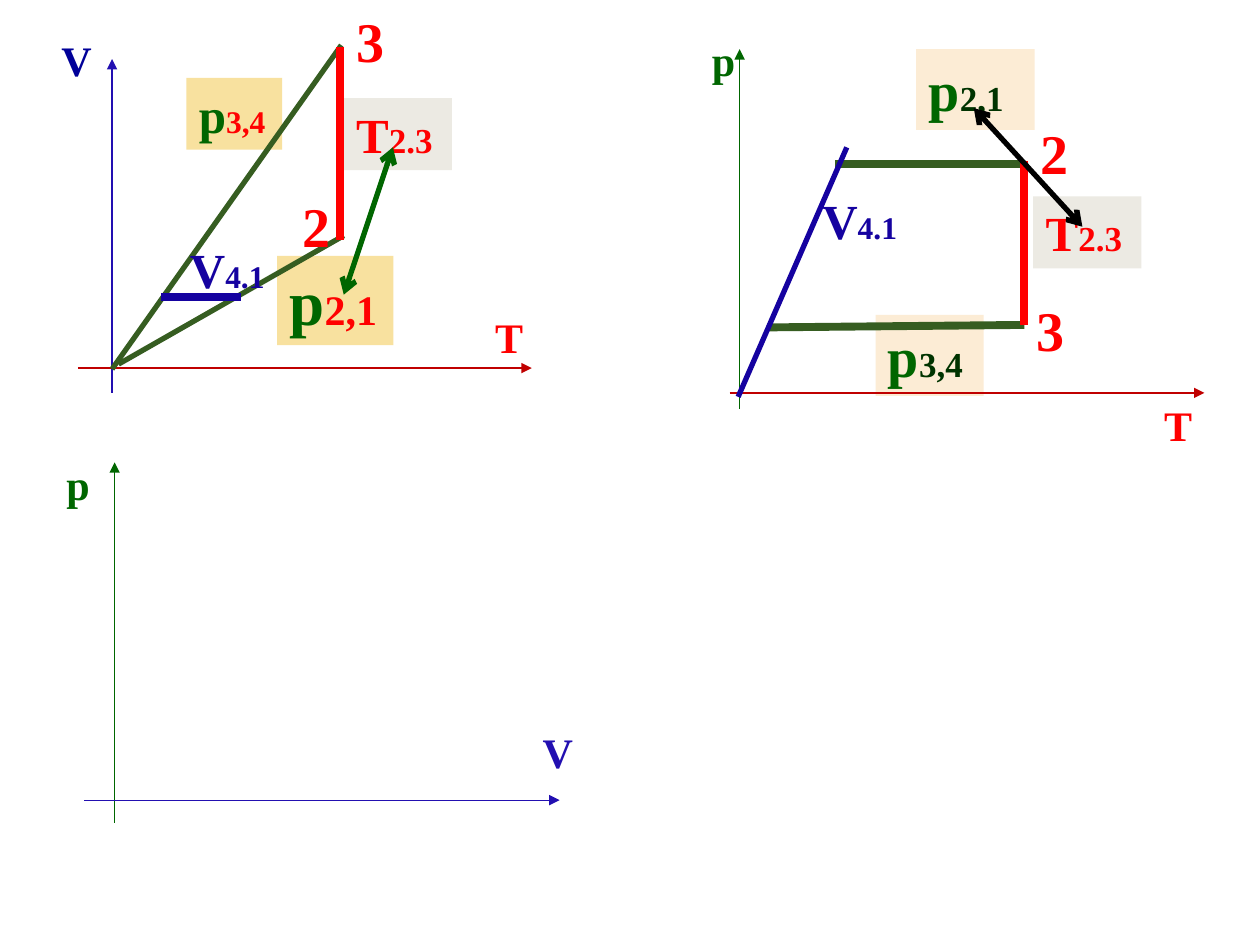
import pptx
import pptx.dml.color
import pptx.enum.shapes
import pptx.enum.text
import pptx.oxml.ns
import pptx.util
from lxml import etree
from pptx.util import Cm

FONT = "Times New Roman"
COLORS = {
    "green": "006600", "dark green": "003300", "olive": "365D21",
    "red": "FF0000", "dark red": "C00000", "black": "000000",
    "blue": "1502A0", "axis blue": "220FB1", "navy": "000099",
    "cream": "FCECD5", "yellow": "F8E19F", "grey": "ECEAE3",
}
# Height in cm of a one-line box for each main text size
BOX_HEIGHTS = {24: 1.27, 28: 1.45, 32: 1.63, 36: 1.8}
AXIS, THIN, THICK = 0.75, 3, 4.5  # line widths in points


def rgb(name):
    return pptx.dml.color.RGBColor.from_string(COLORS[name])


def add_label(page, left, top, width, spans, fill=None):
    """One line of text; spans are (text, size, color)."""
    place = Cm(left), Cm(top), Cm(width), Cm(BOX_HEIGHTS[spans[0][1]])
    if fill:
        box = page.shapes.add_shape(
            pptx.enum.shapes.MSO_SHAPE.RECTANGLE, *place)
        box.shadow.inherit = False
        box.fill.solid()
        box.fill.fore_color.rgb = rgb(fill)
        box.line.fill.background()
    else:
        box = page.shapes.add_textbox(*place)
    frame = box.text_frame
    frame.word_wrap = True
    frame.auto_size = pptx.enum.text.MSO_AUTO_SIZE.SHAPE_TO_FIT_TEXT
    frame.vertical_anchor = pptx.enum.text.MSO_ANCHOR.TOP
    para = frame.paragraphs[0]
    para.alignment = pptx.enum.text.PP_ALIGN.LEFT
    for text, size, color in spans:
        span = para.add_run()
        span.text = text
        span.font.name = FONT
        span.font.size = pptx.util.Pt(size)
        span.font.bold = True
        span.font.color.rgb = rgb(color)


def add_line(page, start, end, color, width, head=None, tail=None):
    """Straight line with optional arrowheads at its start and end."""
    line = page.shapes.add_connector(
        pptx.enum.shapes.MSO_CONNECTOR.STRAIGHT,
        Cm(start[0]), Cm(start[1]), Cm(end[0]), Cm(end[1]))
    line.line.color.rgb = rgb(color)
    line.line.width = pptx.util.Pt(width)
    outline = line.line._get_or_add_ln()
    for tag, kind in (("a:headEnd", head), ("a:tailEnd", tail)):
        if kind:
            etree.SubElement(outline, pptx.oxml.ns.qn(tag), type=kind)
    etree.SubElement(line._element.spPr, pptx.oxml.ns.qn("a:effectLst"))


def add_axes(page, x, top, bottom, left, right, y, colors):
    """Vertical axis pointing up and horizontal axis pointing right."""
    add_line(page, (x, top), (x, bottom), colors[0], AXIS, head="triangle")
    add_line(page, (left, y), (right, y), colors[1], AXIS, tail="triangle")


def add_vt_diagram(page):
    # Names of the processes
    add_label(page, 3.76, 1.57, 1.93,
              [("p", 28, "green"), ("3,4", 18, "red")], "yellow")
    add_label(page, 5.59, 5.16, 2.34,
              [("p", 36, "green"), ("2,1", 24, "red")], "yellow")
    add_label(page, 6.93, 1.98, 2.18,
              [("T", 28, "red"), ("2.3", 20, "red")], "grey")
    # Axes and cycle
    add_axes(page, 2.26, 1.19, 7.92, 1.57, 10.72, 7.42,
             ("axis blue", "dark red"))
    add_line(page, (2.26, 7.44), (6.88, 0.91), "olive", THIN)
    add_line(page, (2.39, 7.34), (6.93, 4.75), "olive", THIN)
    add_line(page, (6.86, 0.94), (6.86, 4.83), "red", THICK)
    add_line(page, (3.25, 5.99), (4.85, 5.99), "blue", THICK)
    add_line(page, (7.92, 2.97), (6.93, 5.94), "green", THIN,
             "arrow", "arrow")
    # Letters and points
    add_label(page, 0.99, 0.58, 0.99, [("V", 24, "navy")])
    add_label(page, 9.73, 6.15, 1.09, [("T", 24, "red")])
    add_label(page, 3.58, 4.7, 2.39, [("V", 28, "blue"), ("4.1", 18, "blue")])
    add_label(page, 5.84, 3.73, 1.4, [("2", 32, "red")])
    add_label(page, 6.93, 0, 1.19, [("3", 32, "red")])


def add_pt_diagram(page):
    # Names of the processes
    add_label(page, 18.47, 0.99, 2.39,
              [("p", 32, "green"), ("2,1", 20, "dark green")], "cream")
    add_label(page, 17.65, 6.35, 2.18,
              [("p", 32, "green"), ("3,4", 20, "dark green")], "cream")
    add_label(page, 20.83, 3.96, 2.18,
              [("T", 28, "red"), ("2.3", 20, "red")], "grey")
    # Axes and cycle
    add_axes(page, 14.91, 0.99, 8.25, 14.71, 24.28, 7.92,
             ("green", "dark red"))
    add_line(page, (16.84, 3.3), (20.62, 3.3), "olive", THICK)
    add_line(page, (15.47, 6.6), (20.65, 6.55), "olive", THICK)
    add_line(page, (20.65, 3.25), (20.65, 6.55), "red", THICK)
    add_line(page, (14.88, 8), (17.07, 2.97), "blue", THIN)
    add_line(page, (19.63, 2.18), (21.82, 4.57), "black", THIN,
             "arrow", "arrow")
    # Letters and points
    add_label(page, 14.1, 0.58, 0.99, [("p", 24, "green")])
    add_label(page, 23.22, 7.92, 1.09, [("T", 24, "red")])
    add_label(page, 16.33, 3.71, 2.39,
              [("V", 28, "blue"), ("4.1", 18, "blue")])
    add_label(page, 20.73, 2.26, 1.4, [("2", 32, "red")])
    add_label(page, 20.65, 5.84, 1.19, [("3", 32, "red")])


def add_pv_diagram(page):
    # Empty axes, to be filled in
    add_axes(page, 2.31, 9.32, 16.59, 1.7, 11.28, 16.13,
             ("green", "axis blue"))
    add_label(page, 1.09, 9.12, 0.99, [("p", 24, "green")])
    add_label(page, 10.69, 14.53, 1.14, [("V", 24, "axis blue")])


def main():
    deck = pptx.Presentation()
    deck.slide_width, deck.slide_height = Cm(25.4), Cm(19.05)
    page = deck.slides.add_slide(deck.slide_layouts[6])
    add_vt_diagram(page)
    add_pt_diagram(page)
    add_pv_diagram(page)
    deck.save("out.pptx")


if __name__ == "__main__":
    main()
